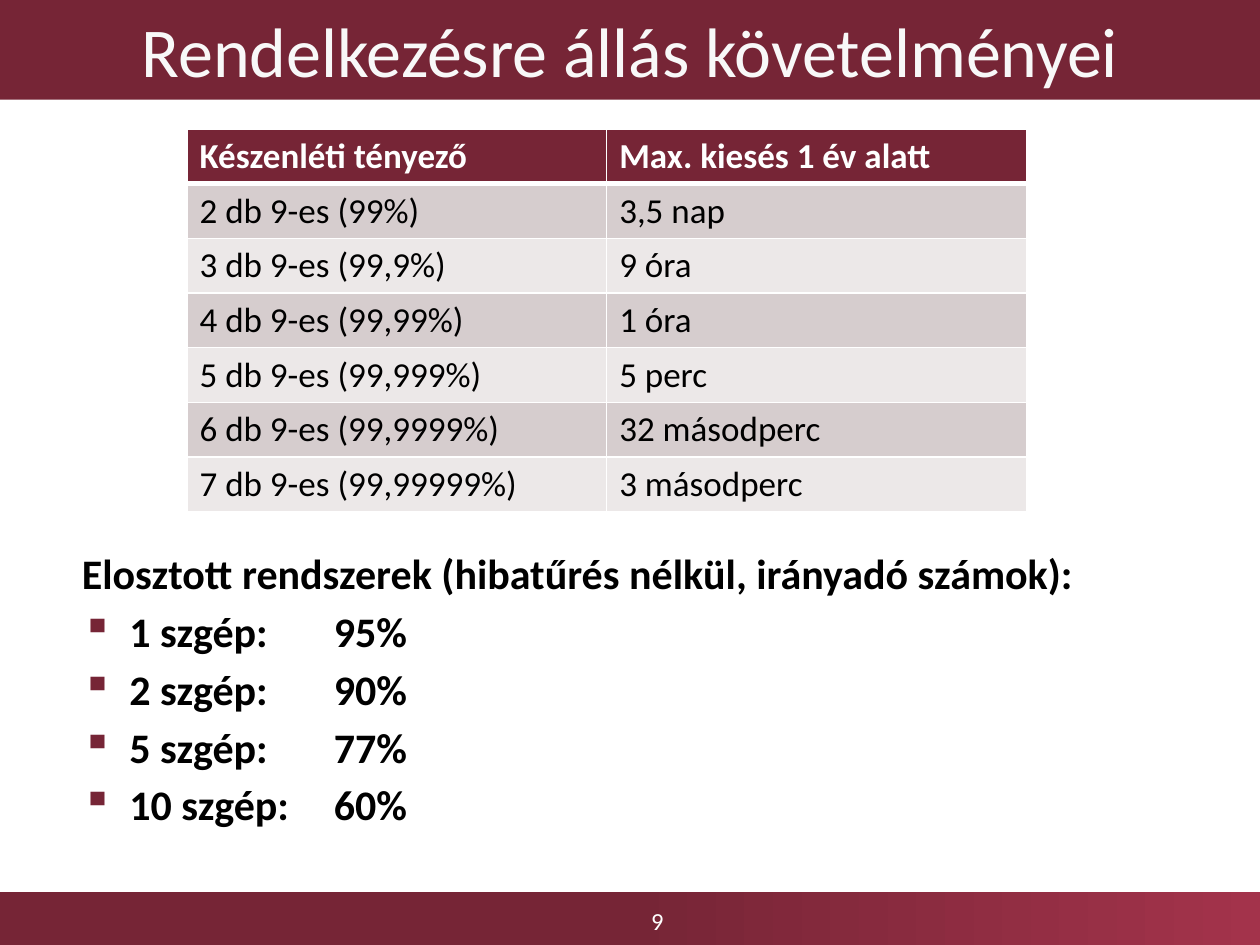
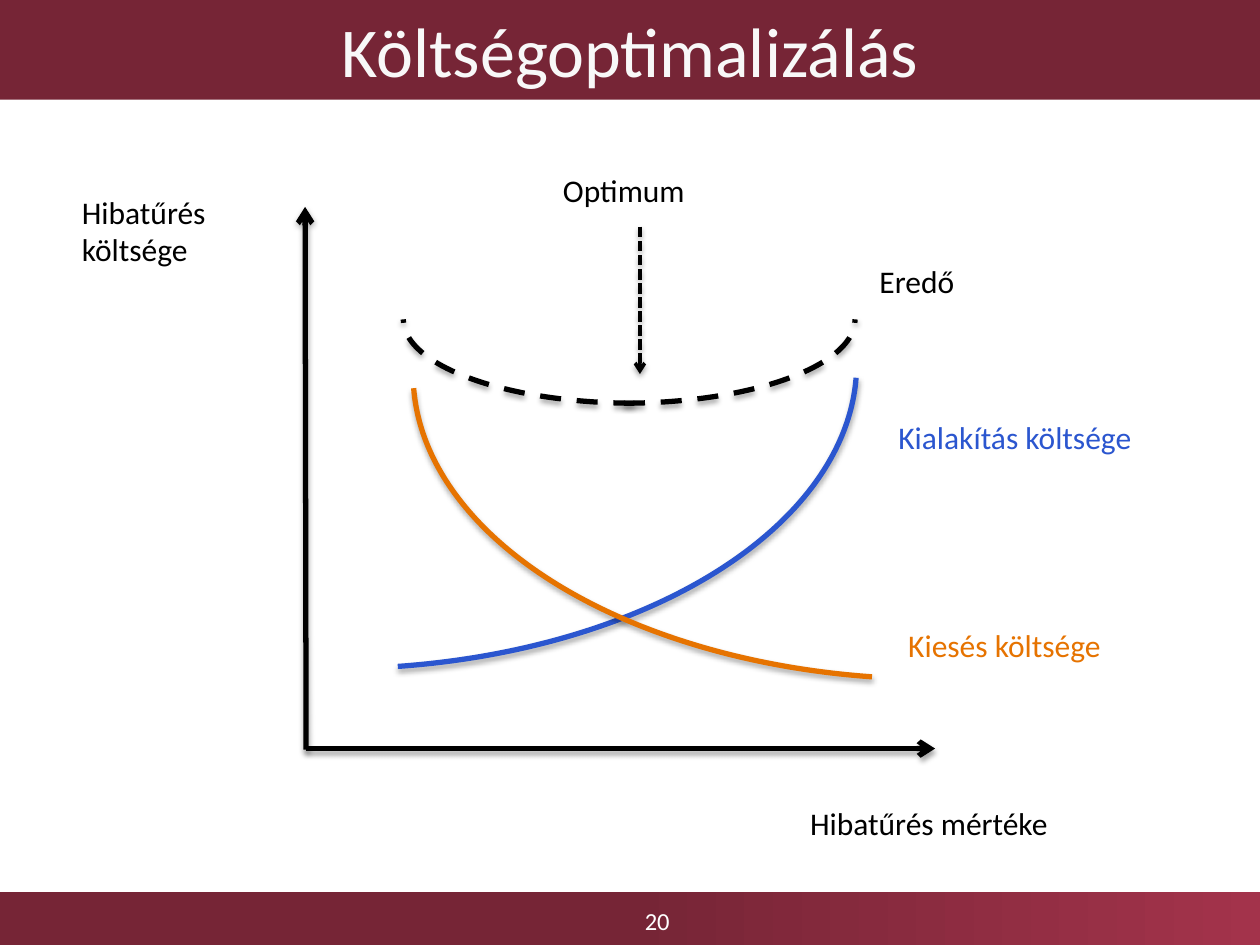
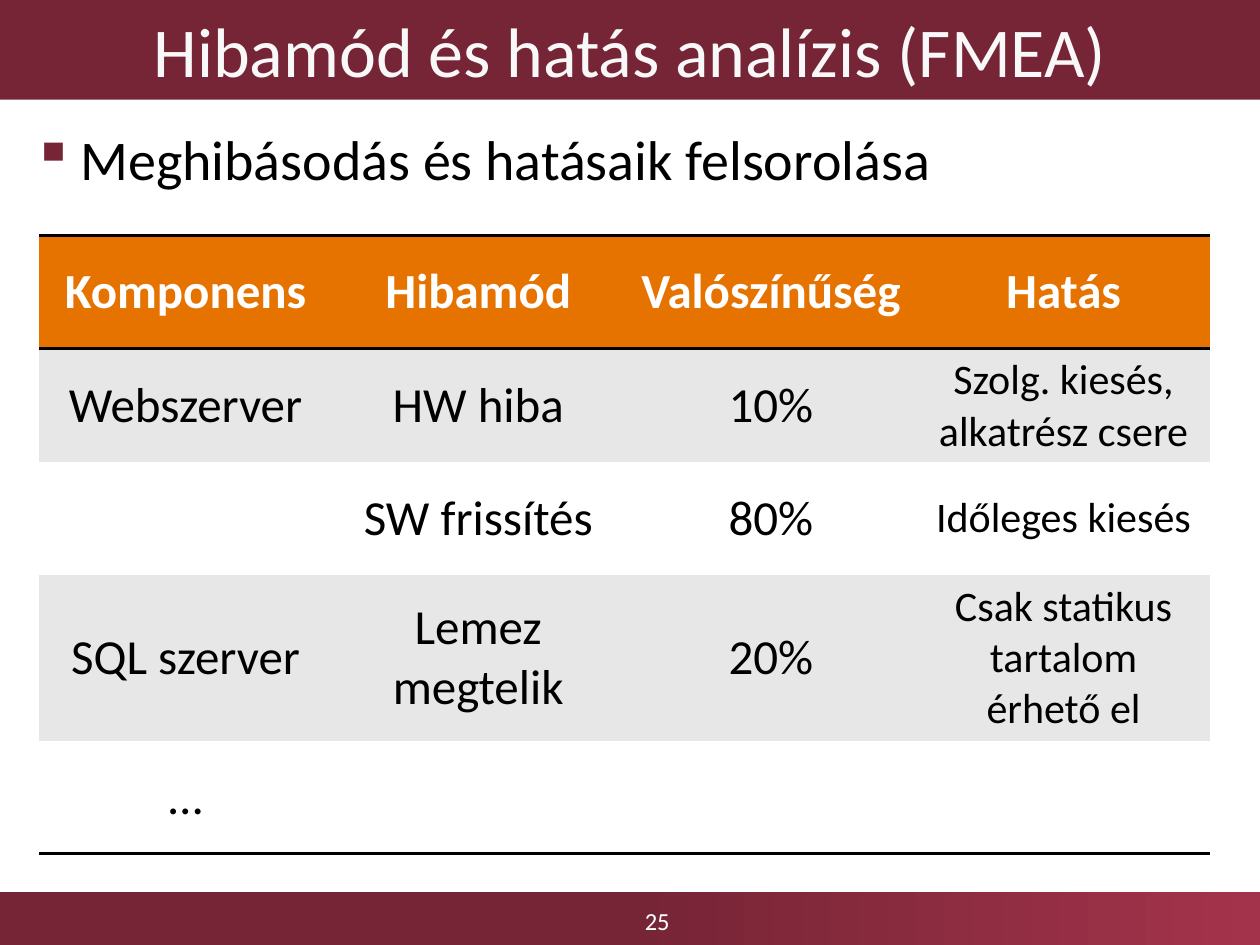
from dataclasses import dataclass

from lxml.etree import SubElement
from pptx import Presentation
from pptx.dml.color import RGBColor
from pptx.enum.dml import MSO_LINE
from pptx.enum.shapes import MSO_CONNECTOR, MSO_SHAPE
from pptx.enum.text import MSO_ANCHOR, PP_ALIGN
from pptx.oxml.ns import qn
from pptx.util import Cm, Pt

NO_TABLE_STYLE = "{2D5ABB26-0587-4C30-8999-92F81FD0307C}"


@dataclass(frozen=True)
class Theme:
    font: str = "Calibri"
    band: str = "762536"
    band_end: str = "A3334B"
    title: str = "F8F8F8"
    white: str = "FFFFFF"
    black: str = "000000"
    blue: str = "2B56CF"
    orange: str = "E67300"
    rose_dark: str = "D6CDCE"
    rose_light: str = "ECE8E8"
    grey: str = "E7E7E7"
    title_size: int = 40
    lead_size: int = 32
    heading_size: int = 28
    body_size: int = 24
    cell_size: int = 20
    label_size: int = 18
    number_size: int = 14


def color(value):
    return RGBColor.from_string(value)


def add_border(cell, side, value, width):
    """Draw one cell edge; side is L, R, T or B. Call before setting the cell fill."""
    line = SubElement(cell._tc.get_or_add_tcPr(), qn(f"a:ln{side}"), w=str(Pt(width)))
    fill = SubElement(line, qn("a:solidFill"))
    SubElement(fill, qn("a:srgbClr"), val=value)


def add_shadow(shape):
    properties = shape._element.spPr
    effects = properties.find(qn("a:effectLst"))
    if effects is None:
        effects = SubElement(properties, qn("a:effectLst"))
    shadow = SubElement(effects, qn("a:outerShdw"), blurRad=str(Pt(3.1)),
                        dist=str(Pt(1.8)), dir="5400000", rotWithShape="0")
    shadow_color = SubElement(shadow, qn("a:srgbClr"), val="000000")
    SubElement(shadow_color, qn("a:alpha"), val="35000")


class Deck:
    def __init__(self, theme):
        self.theme = theme
        self.presentation = Presentation()
        self.presentation.slide_width = Cm(25.4)
        self.presentation.slide_height = Cm(19.05)
        self.slide = None

    def start_slide(self, title, number):
        theme = self.theme
        self.slide = self.presentation.slides.add_slide(self.presentation.slide_layouts[6])
        footer = self.band(17.98, 1.07)
        footer.fill.gradient()
        footer.fill.gradient_angle = 0
        stops = footer.fill.gradient_stops
        for stop, position, value in zip(stops, (0.5, 1), (theme.band, theme.band_end)):
            stop.position = position
            stop.color.rgb = color(value)
        self.text(9.12, 18.06, 8.26, 0.99, str(number), theme.number_size, theme.white,
                  align=PP_ALIGN.CENTER, anchor=MSO_ANCHOR.MIDDLE)
        header = self.band(0, 2.01)
        header.fill.solid()
        header.fill.fore_color.rgb = color(theme.band)
        header.text_frame.vertical_anchor = MSO_ANCHOR.MIDDLE
        self.fill_paragraph(header.text_frame.paragraphs[0], title, theme.title_size,
                            theme.title, align=PP_ALIGN.CENTER)

    def band(self, top, height):
        """Add a shadowless rectangle across the whole slide."""
        band = self.slide.shapes.add_shape(MSO_SHAPE.RECTANGLE, 0, Cm(top),
                                           self.presentation.slide_width, Cm(height))
        band.shadow.inherit = False
        band.line.fill.background()
        return band

    def fill_paragraph(self, paragraph, text, size, text_color, bold=False,
                       align=PP_ALIGN.LEFT):
        paragraph.alignment = align
        run = paragraph.add_run()
        run.text = text
        run.font.name = self.theme.font
        run.font.size = Pt(size)
        run.font.bold = bold
        run.font.color.rgb = color(text_color)

    def text_frame(self, left, top, width, height):
        box = self.slide.shapes.add_textbox(Cm(left), Cm(top), Cm(width), Cm(height))
        box.text_frame.word_wrap = True
        return box.text_frame

    def text(self, left, top, width, height, text, size, text_color,
             align=PP_ALIGN.LEFT, anchor=MSO_ANCHOR.TOP):
        frame = self.text_frame(left, top, width, height)
        frame.vertical_anchor = anchor
        self.fill_paragraph(frame.paragraphs[0], text, size, text_color, align=align)

    def label(self, left, top, width, text, text_color=None, height=1.02):
        self.text(left, top, width, height, text, self.theme.label_size,
                  text_color or self.theme.black)

    def bullets(self, left, top, width, height, items, size, heading=None, bold=False):
        """Add a bulleted list, with an unbulleted heading line if one is given."""
        frame = self.text_frame(left, top, width, height)
        lines = ([heading] if heading else []) + items
        for index, line in enumerate(lines):
            paragraph = frame.add_paragraph() if index else frame.paragraphs[0]
            if index:
                paragraph.space_before = Pt(4.2)
            properties = paragraph._p.get_or_add_pPr()
            properties.set("marL", str(Cm(0.96)))
            properties.set("indent", str(-Cm(0.96)))
            if line != heading:
                bullet_color = SubElement(properties, qn("a:buClr"))
                SubElement(bullet_color, qn("a:srgbClr"), val=self.theme.band)
                SubElement(properties, qn("a:buChar"), char="▪")
            self.fill_paragraph(paragraph, line, size, self.theme.black, bold)

    def table(self, left, top, column_width, row_heights, rows, style_cell):
        """Add a table; style_cell(cell, row, column) draws the borders of a cell
        and returns its fill, text size and alignment."""
        column_count = len(rows[0])
        table = self.slide.shapes.add_table(
            len(rows), column_count, Cm(left), Cm(top),
            Cm(column_width * column_count), Cm(sum(row_heights))).table
        table._tbl.tblPr.find(qn("a:tableStyleId")).text = NO_TABLE_STYLE
        table.horz_banding = False
        for column in table.columns:
            column.width = Cm(column_width)
        for row_index, texts in enumerate(rows):
            table.rows[row_index].height = Cm(row_heights[row_index])
            is_header = row_index == 0
            text_color = self.theme.white if is_header else self.theme.black
            for column_index, text in enumerate(texts):
                cell = table.cell(row_index, column_index)
                fill, size, align = style_cell(cell, row_index, column_index)
                cell.fill.solid()
                cell.fill.fore_color.rgb = color(fill)
                if text:
                    self.fill_paragraph(cell.text_frame.paragraphs[0], text, size,
                                        text_color, is_header, align)

    def arrow(self, start, end, width=3, dash=None):
        points = [Cm(value) for value in (*start, *end)]
        arrow = self.slide.shapes.add_connector(MSO_CONNECTOR.STRAIGHT, *points)
        self.outline(arrow, self.theme.black, width, dash)
        SubElement(arrow._element.spPr.find(qn("a:ln")), qn("a:tailEnd"), type="arrow")
        add_shadow(arrow)

    def arc(self, left, top, width, height, line_color, mirrored, angles=None, dash=None):
        """Add an arc flipped upside down, and sideways too when mirrored."""
        arc = self.slide.shapes.add_shape(MSO_SHAPE.ARC, Cm(left), Cm(top),
                                          Cm(width), Cm(height))
        arc.shadow.inherit = False
        arc.fill.background()
        for index, angle in enumerate(angles or ()):
            arc.adjustments[index] = angle
        frame = arc._element.spPr.find(qn("a:xfrm"))
        frame.set("flipV", "1")
        if mirrored:
            frame.set("flipH", "1")
        self.outline(arc, line_color, 3, dash)
        add_shadow(arc)

    def outline(self, shape, line_color, width, dash):
        shape.line.color.rgb = color(line_color)
        shape.line.width = Pt(width)
        if dash:
            shape.line.dash_style = dash


def add_availability_slide(deck):
    theme = deck.theme
    deck.start_slide("Rendelkezésre állás követelményei", 9)
    deck.bullets(1.4, 10.92, 22.94, 6.27,
                 ["1 szgép: \t95%", "2 szgép: \t90%", "5 szgép: \t77%", "10 szgép: \t60%"],
                 theme.body_size, bold=True,
                 heading="Elosztott rendszerek (hibatűrés nélkül, irányadó számok):")

    def style_cell(cell, row, column):
        for side in "LRTB":
            thick = (row, side) in ((0, "B"), (1, "T"))
            add_border(cell, side, theme.white, 3 if thick else 1)
        stripe = theme.rose_dark if row % 2 else theme.rose_light
        return stripe if row else theme.band, theme.cell_size, PP_ALIGN.LEFT

    rows = [
        ("Készenléti tényező", "Max. kiesés 1 év alatt"),
        ("2 db 9-es (99%)", "3,5 nap"),
        ("3 db 9-es (99,9%)", "9 óra"),
        ("4 db 9-es (99,99%)", "1 óra"),
        ("5 db 9-es (99,999%)", "5 perc"),
        ("6 db 9-es (99,9999%)", "32 másodperc"),
        ("7 db 9-es (99,99999%)", "3 másodperc"),
    ]
    deck.table(3.77, 2.6, 8.46, [1.1] * len(rows), rows, style_cell)


def add_cost_slide(deck):
    theme = deck.theme
    deck.start_slide("Költségoptimalizálás", 20)
    deck.arrow((6.16, 15.09), (18.85, 15.09))
    deck.arrow((6.17, 15.11), (6.15, 4.17))
    deck.label(16.08, 16.08, 5.56, "Hibatűrés mértéke")
    deck.label(1.4, 3.76, 3.76, "Hibatűrés költsége", height=1.8)
    cost_angles = (169.03, 215.08)
    deck.arc(-3.76, 1.19, 21.03, 12.29, theme.blue, False, cost_angles)
    deck.arc(8.33, 1.4, 21.03, 12.29, theme.orange, True, cost_angles)
    deck.label(17.86, 8.31, 6.76, "Kialakítás költsége", theme.blue)
    deck.label(18.06, 12.5, 5.77, "Kiesés költsége", theme.orange)
    for left, mirrored in ((7.92, False), (8.13, True)):
        deck.arc(left, 4.75, 9.32, 3.38, theme.black, mirrored, dash=MSO_LINE.DASH)
    deck.label(17.48, 5.16, 6.35, "Eredő")
    deck.label(11.1, 3.33, 5.56, "Optimum")
    deck.arrow((12.9, 4.57), (12.9, 7.54), width=2, dash=MSO_LINE.SQUARE_DOT)


def add_failure_mode_slide(deck):
    theme = deck.theme
    deck.start_slide("Hibamód és hatás analízis (FMEA)", 25)
    deck.bullets(0.41, 2.39, 24.61, 15.37, ["Meghibásodás és hatásaik felsorolása"],
                 theme.lead_size)
    rows = [
        ("Komponens", "Hibamód", "Valószínűség", "Hatás"),
        ("Webszerver", "HW hiba", "10%", "Szolg. kiesés, alkatrész csere"),
        ("", "SW frissítés", "80%", "Időleges kiesés"),
        ("SQL szerver", "Lemez megtelik", "20%", "Csak statikus tartalom érhető el"),
        ("…", "", "", ""),
    ]

    def style_cell(cell, row, column):
        if row == 0:
            add_border(cell, "T", theme.black, 2)
        if row in (0, len(rows) - 1):
            add_border(cell, "B", theme.black, 2)
        cell.vertical_anchor = MSO_ANCHOR.MIDDLE
        stripe = theme.grey if row % 2 else theme.white
        size = theme.body_size if row and column == 3 else theme.heading_size
        return stripe if row else theme.orange, size, PP_ALIGN.CENTER

    deck.table(0.79, 4.75, 5.9, [2.28, 2.28, 2.28, 3.34, 2.28], rows, style_cell)


def main():
    deck = Deck(Theme())
    add_availability_slide(deck)
    add_cost_slide(deck)
    add_failure_mode_slide(deck)
    deck.presentation.save("out.pptx")


if __name__ == "__main__":
    main()
